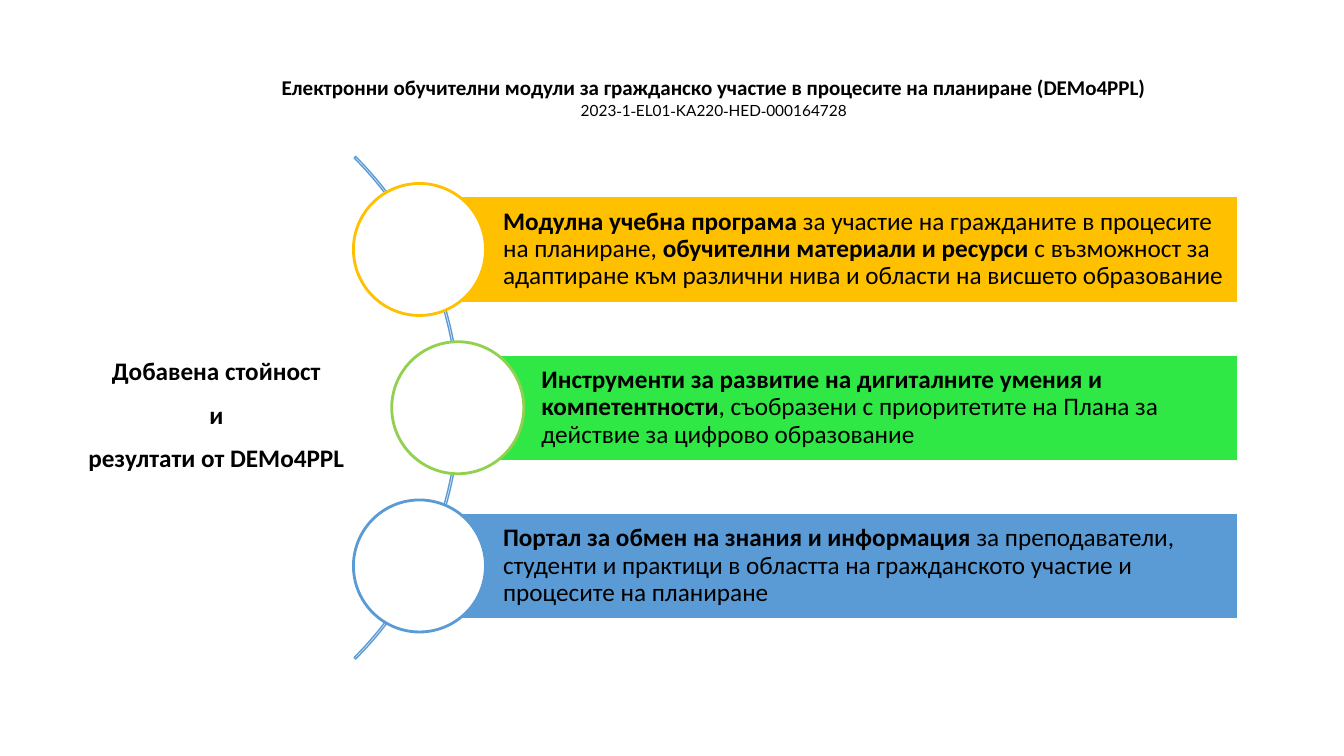
from pptx import Presentation
from pptx.dml.color import RGBColor
from pptx.enum.shapes import MSO_SHAPE
from pptx.enum.text import MSO_ANCHOR, MSO_AUTO_SIZE, PP_ALIGN
from pptx.util import Inches, Pt

ARC, BAR, CIRCLE = MSO_SHAPE.BLOCK_ARC, MSO_SHAPE.RECTANGLE, MSO_SHAPE.OVAL
CENTER, LEFT = PP_ALIGN.CENTER, PP_ALIGN.LEFT
TOP, MIDDLE = MSO_ANCHOR.TOP, MSO_ANCHOR.MIDDLE
TITLE_ONLY = 5

ROW_TOP, ROW_PITCH = 1.95, 1.57
BAR_HEIGHT, BAR_RIGHT = 1.05, 12.28
CIRCLE_SIZE = 1.31
ARC_SIZE = 7.05

ROWS = [
    (4.16, "FFC000", "FFC000", [
        ("Модулна учебна програма ", True),
        ("за участие на гражданите в процесите на планиране, ", False),
        ("обучителни материали и ресурси ", True),
        ("с възможност за адаптиране към различни нива и области на висшето образование", False)]),
    (4.54, "30E845", "92D050", [
        ("Инструменти за развитие на дигиталните умения и компетентности", True),
        (", съобразени с приоритетите на Плана за действие за цифрово образование", False)]),
    (4.16, "5B9BD5", "5B9BD5", [
        ("Портал за обмен на знания и информация", True),
        (" за преподаватели, студенти и практици в областта на гражданското участие и "
         "процесите на планиране", False)]),
]


def add_figure(kind, left, top, width, height, fill, line, weight):
    figure = page.shapes.add_shape(kind, Inches(left), Inches(top), Inches(width), Inches(height))
    figure.shadow.inherit = False
    if fill:
        figure.fill.solid()
        figure.fill.fore_color.rgb = RGBColor.from_string(fill)
    else:
        figure.fill.background()
    figure.line.color.rgb = RGBColor.from_string(line)
    figure.line.width = Pt(weight)
    return figure


def format_paragraph(paragraph, size, align, spacing, after, bold=None):
    paragraph.alignment = align
    paragraph.line_spacing = spacing
    paragraph.space_after = Pt(after)
    paragraph.font.name = "Calibri"
    paragraph.font.size = Pt(size)
    paragraph.font.bold = bold
    paragraph.font.color.rgb = RGBColor.from_string("000000")


deck = Presentation()
deck.slide_width, deck.slide_height = Inches(13.33), Inches(7.5)
page = deck.slides.add_slide(deck.slide_layouts[TITLE_ONLY])

title = page.shapes.title
title.left, title.top, title.width, title.height = (
    Inches(2.54), Inches(0.69), Inches(9.08), Inches(0.55))
frame = title.text_frame
frame.word_wrap = True
frame.auto_size = MSO_AUTO_SIZE.NONE
frame.vertical_anchor = TOP
heading = frame.paragraphs[0]
heading.text = "Електронни обучителни модули за гражданско участие в процесите на планиране (DEMo4PPL)"
format_paragraph(heading, 15, CENTER, 1.0, 0, True)
number = frame.add_paragraph()
format_paragraph(number, 11, CENTER, 1.07, 8, False)
for index, part in enumerate("2023‐1‐EL01‐KA220‐HED‐000164728".split("‐")):
    if index:
        dash = number.add_run()
        dash.text = "‐"
        dash.font.name = "Times New Roman"
    span = number.add_run()
    span.text = part
    span.font.name = "Lato"

box = page.shapes.add_textbox(Inches(0.75), Inches(3.45), Inches(2.79), Inches(1.31))
box.text_frame.word_wrap = True
box.text_frame.text = "Добавена стойност\nи\nрезултати от DEMo4PPL"
for paragraph in box.text_frame.paragraphs:
    format_paragraph(paragraph, 18, CENTER, 1.08, 8, True)

arc = add_figure(ARC, -2.49, 0.52, ARC_SIZE, ARC_SIZE, None, "5B9BD5", 1)
for index, value in enumerate((189, 27, 0.003)):
    arc.adjustments[index] = value

for row, (left, fill, outline, spans) in enumerate(ROWS):
    top = ROW_TOP + row * ROW_PITCH
    bar = add_figure(BAR, left, top, BAR_RIGHT - left, BAR_HEIGHT, fill, "FFFFFF", 1)
    frame = bar.text_frame
    frame.word_wrap = True
    frame.vertical_anchor = MIDDLE
    frame.margin_left = Inches(0.83)
    frame.margin_top = frame.margin_right = frame.margin_bottom = Inches(0.05)
    paragraph = frame.paragraphs[0]
    format_paragraph(paragraph, 18, LEFT, 0.9, 0)
    for text, bold in spans:
        span = paragraph.add_run()
        span.text = text
        span.font.bold = bold
    add_figure(CIRCLE, left - CIRCLE_SIZE / 2, top + (BAR_HEIGHT - CIRCLE_SIZE) / 2,
               CIRCLE_SIZE, CIRCLE_SIZE, "FFFFFF", outline, 2)

deck.save("out.pptx")
